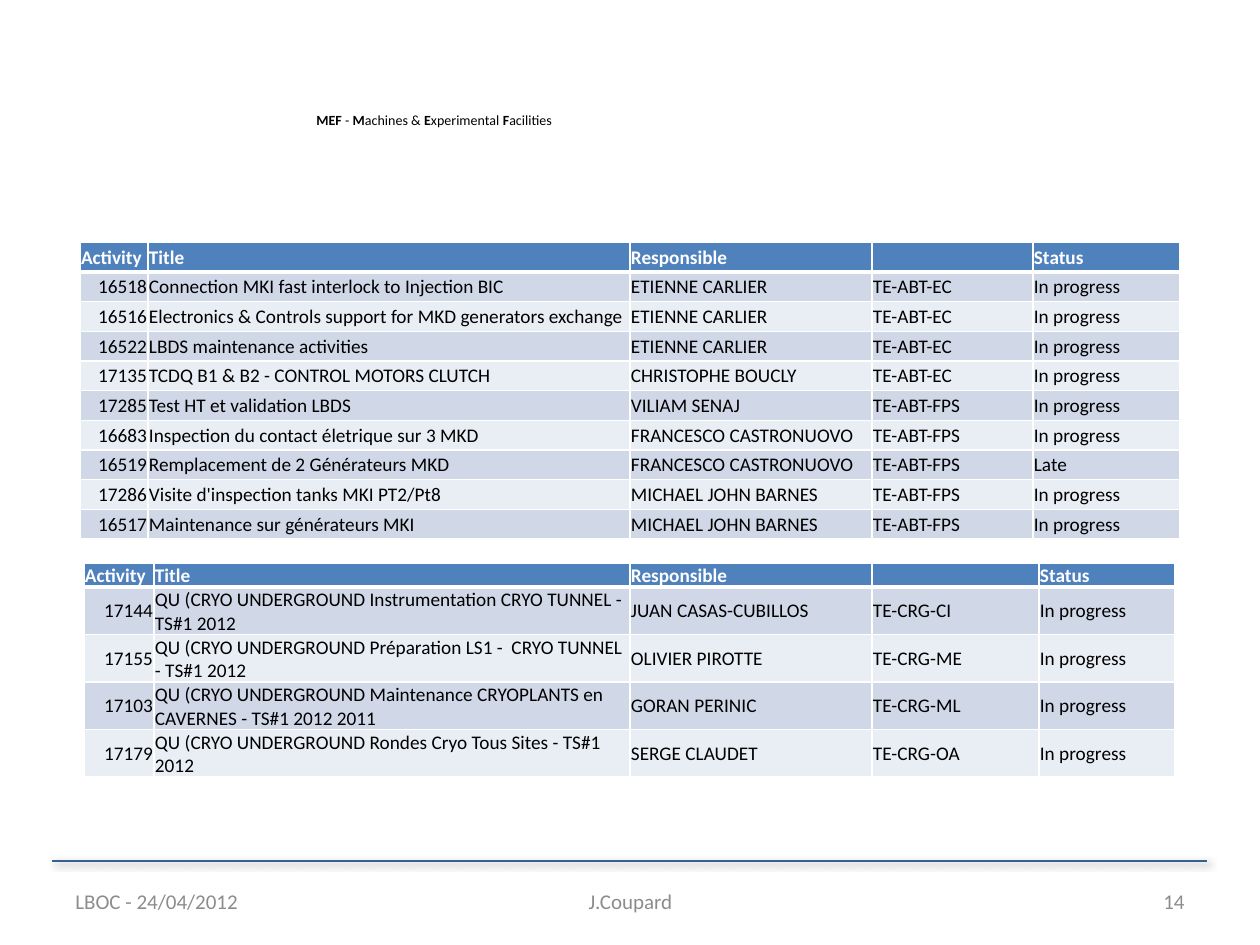
from lxml import etree
from pptx import Presentation
from pptx.dml.color import RGBColor
from pptx.enum.shapes import MSO_CONNECTOR
from pptx.enum.text import MSO_ANCHOR, PP_ALIGN
from pptx.oxml.ns import qn
from pptx.util import Emu, Pt

PX_PER_INCH = 126
FONT = "Calibri"
COLORS = {
    "rule": "376092", "text": "000000", "footer": "8C8C8C", "white": "FFFFFF",
    "header": "4F81BD", "odd_row": "D0D8E8", "even_row": "E9EDF4",
}
LEFT, CENTER, RIGHT = PP_ALIGN.LEFT, PP_ALIGN.CENTER, PP_ALIGN.RIGHT

RULE = (52, 861, 1207)  # left, y, right
# (text, bold) runs
CAPTION = [
    ("MEF ", True), ("- ", False), ("M", True), ("achines & ", False),
    ("E", True), ("xperimental ", False), ("F", True), ("acilities", False),
]
# text, left, width, alignment
FOOTERS = [
    ("LBOC - 24/04/2012", 63, 294, LEFT),
    ("J.Coupard", 431, 399, CENTER),
    ("14", 903, 294, RIGHT),
]
HEADINGS = ("Activity", "Title", "Responsible", "", "Status")
CRYO_TABLE = {
    "left": 84, "top": 563, "height": 214, "header": 24,
    "columns": (70, 476, 242, 167, 136),
    "rows": [
        ("17144", "QU (CRYO UNDERGROUND Instrumentation CRYO TUNNEL - TS#1 2012",
         "JUAN CASAS-CUBILLOS", "TE-CRG-CI", "In progress"),
        ("17155", "QU (CRYO UNDERGROUND Préparation LS1 -  CRYO TUNNEL - TS#1 2012",
         "OLIVIER PIROTTE", "TE-CRG-ME", "In progress"),
        ("17103", "QU (CRYO UNDERGROUND Maintenance CRYOPLANTS en CAVERNES - TS#1 2012 2011",
         "GORAN PERINIC", "TE-CRG-ML", "In progress"),
        ("17179", "QU (CRYO UNDERGROUND Rondes Cryo Tous Sites - TS#1 2012",
         "SERGE CLAUDET", "TE-CRG-OA", "In progress"),
    ],
}
BEAM_TRANSFER_TABLE = {
    "left": 80, "top": 242, "height": 297, "header": 30,
    "columns": (68, 482, 242, 161, 147),
    "rows": [
        ("16518", "Connection MKI fast interlock to Injection BIC",
         "ETIENNE CARLIER", "TE-ABT-EC", "In progress"),
        ("16516", "Electronics & Controls support for MKD generators exchange",
         "ETIENNE CARLIER", "TE-ABT-EC", "In progress"),
        ("16522", "LBDS maintenance activities",
         "ETIENNE CARLIER", "TE-ABT-EC", "In progress"),
        ("17135", "TCDQ B1 & B2 - CONTROL MOTORS CLUTCH",
         "CHRISTOPHE BOUCLY", "TE-ABT-EC", "In progress"),
        ("17285", "Test HT et validation LBDS",
         "VILIAM SENAJ", "TE-ABT-FPS", "In progress"),
        ("16683", "Inspection du contact életrique sur 3 MKD",
         "FRANCESCO CASTRONUOVO", "TE-ABT-FPS", "In progress"),
        ("16519", "Remplacement de 2 Générateurs MKD",
         "FRANCESCO CASTRONUOVO", "TE-ABT-FPS", "Late"),
        ("17286", "Visite d'inspection tanks MKI PT2/Pt8",
         "MICHAEL JOHN BARNES", "TE-ABT-FPS", "In progress"),
        ("16517", "Maintenance sur générateurs MKI",
         "MICHAEL JOHN BARNES", "TE-ABT-FPS", "In progress"),
    ],
}


def px(length):
    return Emu(round(length * 914400 / PX_PER_INCH))


def rgb(name):
    return RGBColor.from_string(COLORS[name])


def set_font(font, size, color, bold=None):
    font.name, font.size, font.bold = FONT, Pt(size), bold
    font.color.rgb = rgb(color)


def add_rule(slide):
    left, y, right = RULE
    rule = slide.shapes.add_connector(
        MSO_CONNECTOR.STRAIGHT, px(left), px(y), px(right), px(y))
    rule.line.color.rgb = rgb("rule")
    rule.line.width = Pt(1.5)
    effects = etree.SubElement(rule._element.spPr, qn("a:effectLst"))
    shadow = etree.SubElement(
        effects, qn("a:outerShdw"), blurRad=str(Pt(4)), dist=str(Pt(2)),
        dir=str(45 * 60000), rotWithShape="0")
    color = etree.SubElement(shadow, qn("a:srgbClr"), val=COLORS["text"])
    etree.SubElement(color, qn("a:alpha"), val="40000")


def add_caption(slide):
    frame = slide.shapes.add_textbox(px(304), px(105), px(263), px(30)).text_frame
    frame.word_wrap = False
    paragraph = frame.paragraphs[0]
    for text, bold in CAPTION:
        run = paragraph.add_run()
        run.text = text
        set_font(run.font, 8, "text", bold)


def add_footer(slide, text, left, width, alignment):
    frame = slide.shapes.add_textbox(px(left), px(876), px(width), px(50)).text_frame
    frame.word_wrap = True
    frame.vertical_anchor = MSO_ANCHOR.MIDDLE
    paragraph = frame.paragraphs[0]
    paragraph.text, paragraph.alignment = text, alignment
    set_font(paragraph.font, 12, "footer")


def set_borders(cell, bottom_width):
    """Draw white borders; they must come before the fill in the cell XML."""
    properties = cell._tc.get_or_add_tcPr()
    for side, width in (("L", 1), ("R", 1), ("T", 1), ("B", bottom_width)):
        border = etree.SubElement(properties, qn(f"a:ln{side}"), w=str(Pt(width)))
        fill = etree.SubElement(border, qn("a:solidFill"))
        etree.SubElement(fill, qn("a:srgbClr"), val=COLORS["white"])


def fill_cell(cell, text, is_header, alignment, fill):
    set_borders(cell, 3 if is_header else 1)
    cell.fill.solid()
    cell.fill.fore_color.rgb = rgb(fill)
    cell.margin_left = cell.margin_right = cell.margin_top = px(1)
    cell.margin_bottom = 0
    cell.vertical_anchor = MSO_ANCHOR.MIDDLE
    paragraph = cell.text_frame.paragraphs[0]
    paragraph.text, paragraph.alignment = text, alignment
    set_font(paragraph.font, 11, "white" if is_header else "text", is_header)
    if not text:  # keeps an empty cell from stretching its row
        paragraph._p.get_or_add_endParaRPr().set("sz", "1100")


def add_activity_table(slide, data):
    rows = [HEADINGS] + data["rows"]
    table = slide.shapes.add_table(
        len(rows), len(HEADINGS), px(data["left"]), px(data["top"]),
        px(sum(data["columns"])), px(data["height"])).table
    for column, width in zip(table.columns, data["columns"]):
        column.width = px(width)
    body_height = (data["height"] - data["header"]) / len(data["rows"])
    for r, values in enumerate(rows):
        is_header = r == 0
        table.rows[r].height = px(data["header"] if is_header else body_height)
        fill = "header" if is_header else "odd_row" if r % 2 else "even_row"
        for c, text in enumerate(values):
            alignment = RIGHT if c == 0 and not is_header else LEFT
            fill_cell(table.cell(r, c), text, is_header, alignment, fill)


def main():
    presentation = Presentation()
    presentation.slide_width, presentation.slide_height = px(1260), px(945)
    slide = presentation.slides.add_slide(presentation.slide_layouts[6])
    add_rule(slide)
    add_caption(slide)
    for footer in FOOTERS:
        add_footer(slide, *footer)
    for data in (CRYO_TABLE, BEAM_TRANSFER_TABLE):
        add_activity_table(slide, data)
    presentation.save("out.pptx")


if __name__ == "__main__":
    main()
